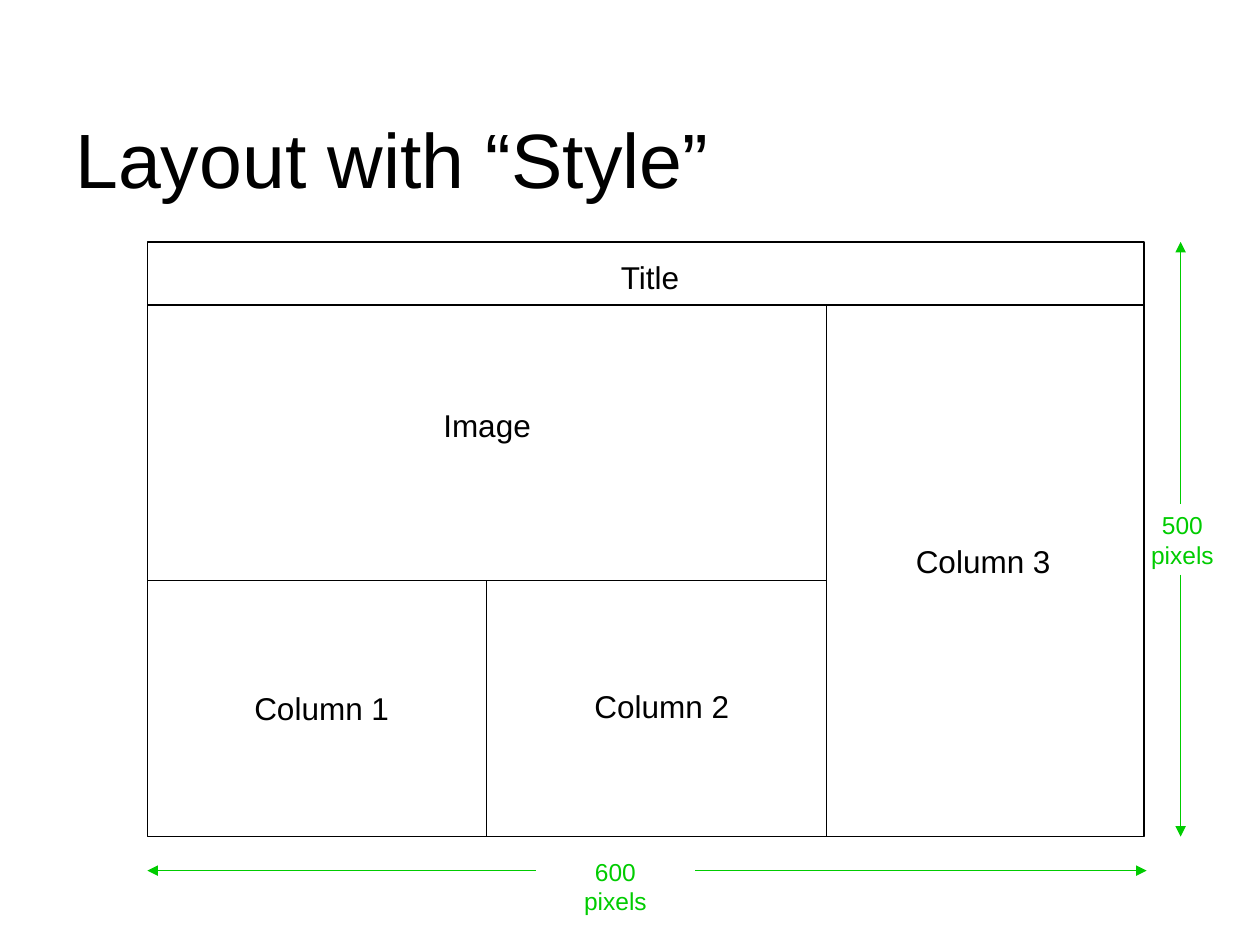
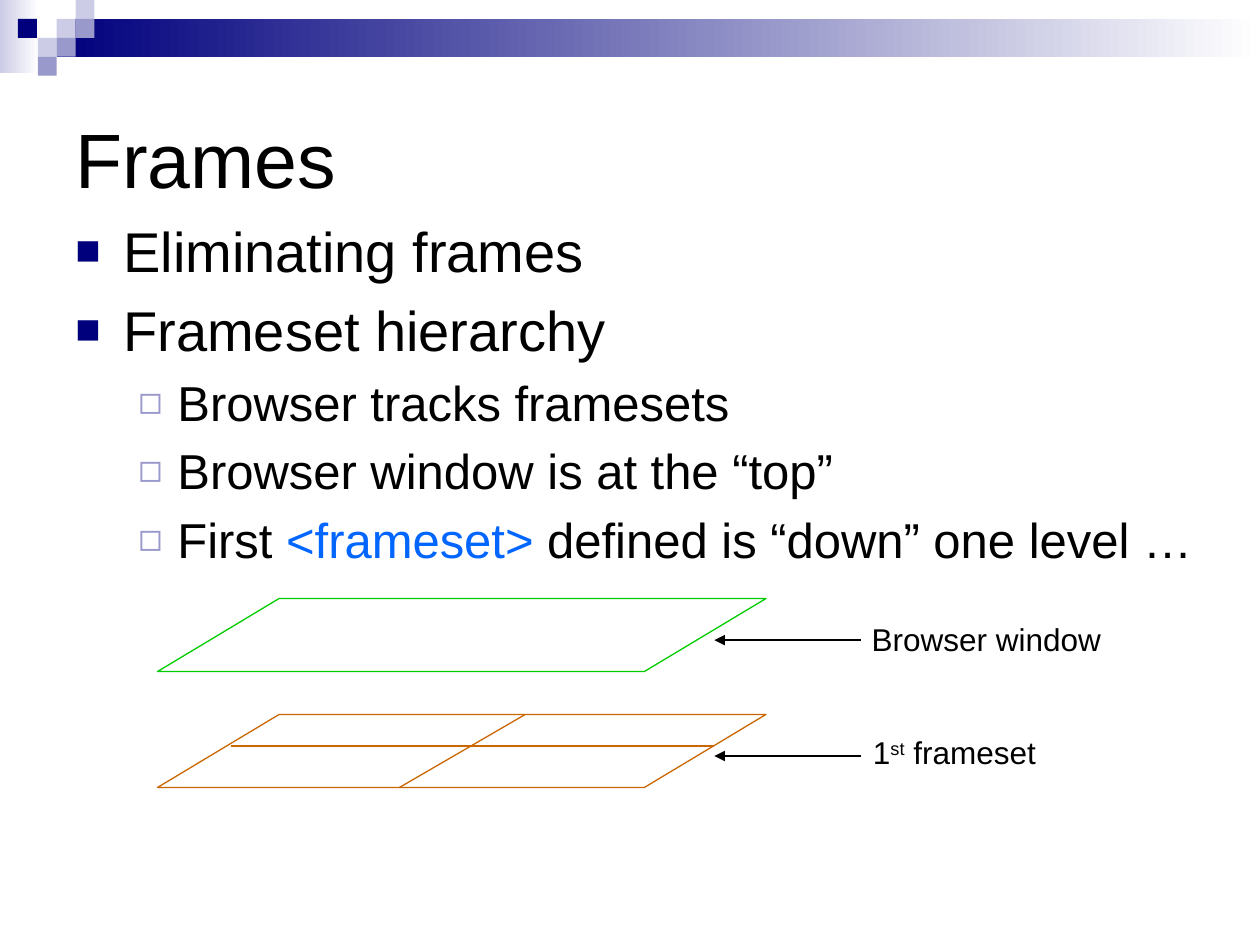
import lxml.etree
import pptx
import pptx.dml.color
import pptx.enum.shapes
import pptx.enum.text
import pptx.oxml.ns
import pptx.util

Inches = pptx.util.Inches
Shape = pptx.enum.shapes.MSO_SHAPE
Align = pptx.enum.text.PP_ALIGN

FONT = "Arial"
BLACK, WHITE = "000000", "FFFFFF"
NAVY, LAVENDER, PALE = "00007D", "9999CC", "CCCCE6"
GREEN, ORANGE, BLUE = "00CC00", "CC6600", "0066FF"
BULLETS = [
    {"size": 32, "margin": 0.38, "indent": -0.38, "char": "■", "color": NAVY, "percent": 75},
    {"size": 28, "margin": 0.81, "indent": -0.31, "char": "◻", "color": LAVENDER, "percent": 80},
]


def rgb(color):
    return pptx.dml.color.RGBColor.from_string(color)


def add_xml(parent, tag, **attributes):
    return lxml.etree.SubElement(parent, pptx.oxml.ns.qn(tag), **attributes)


class Deck:
    """Holds the presentation, its style and the slide being drawn."""

    def __init__(self):
        self.presentation = pptx.Presentation()
        self.presentation.slide_width = Inches(10)
        self.presentation.slide_height = Inches(7.5)
        self.slide = None

    def add_slide(self, title, banded=False):
        self.slide = self.presentation.slides.add_slide(self.presentation.slide_layouts[6])
        if banded:
            self.band()
        frame = self.frame(0.5, 0.5, 9, 1.5)
        frame.vertical_anchor = pptx.enum.text.MSO_ANCHOR.MIDDLE
        self.run(frame.paragraphs[0], title, 44)

    def band(self):
        self.shape(0, 0, 0.31, 0.58, fill=(PALE, WHITE))
        self.shape(0.45, 0.15, 9.55, 0.3, fill=(NAVY, WHITE))
        squares = [(3, 1, PALE), (4, 0, PALE), (4, 1, LAVENDER), (2, 2, PALE),
                   (0.95, 1, NAVY), (3, 2, LAVENDER), (2, 3, LAVENDER)]
        for column, row, color in squares:
            self.shape(column * 0.15, row * 0.15, 0.15, 0.15, fill=color)

    def shape(self, left, top, width, height, kind=Shape.RECTANGLE, fill=None, line=None):
        shape = self.slide.shapes.add_shape(
            kind, Inches(left), Inches(top), Inches(width), Inches(height))
        shape.shadow.inherit = False
        if fill is None:
            shape.fill.background()
        elif isinstance(fill, tuple):
            shape.fill.gradient()
            shape.fill.gradient_angle = 0
            for stop, color in zip(shape.fill.gradient_stops, fill):
                stop.color.rgb = rgb(color)
        else:
            shape.fill.solid()
            shape.fill.fore_color.rgb = rgb(fill)
        if line:
            shape.line.color.rgb = rgb(line)
            shape.line.width = pptx.util.Pt(0.75)
        else:
            shape.line.fill.background()

    def line(self, start, end, color=BLACK, arrow=False):
        connector = self.slide.shapes.add_connector(
            pptx.enum.shapes.MSO_CONNECTOR.STRAIGHT, *map(Inches, start + end))
        connector.line.color.rgb = rgb(color)
        connector.line.width = pptx.util.Pt(0.75)
        properties = connector._element.spPr
        if arrow:
            add_xml(properties.find(pptx.oxml.ns.qn("a:ln")), "a:tailEnd", type="triangle")
        add_xml(properties, "a:effectLst")

    def frame(self, left, top, width, height, wrap=True):
        box = self.slide.shapes.add_textbox(
            Inches(left), Inches(top), Inches(width), Inches(height))
        box.text_frame.word_wrap = wrap
        return box.text_frame

    def run(self, paragraph, text, size, color=BLACK, raised=False):
        run = paragraph.add_run()
        run.text = text
        run.font.name = FONT
        run.font.size = pptx.util.Pt(size)
        run.font.color.rgb = rgb(color)
        if raised:
            run._r.get_or_add_rPr().set("baseline", "30000")

    def label(self, text, left, top, width, height=0.4, size=18, color=BLACK,
              align=Align.LEFT, wrap=False):
        paragraph = self.frame(left, top, width, height, wrap).paragraphs[0]
        paragraph.alignment = align
        pieces = [(text,)] if isinstance(text, str) else text
        for piece, *raised in pieces:
            self.run(paragraph, piece, size, color, *raised)

    def bullets(self, left, top, width, height, items):
        frame = self.frame(left, top, width, height)
        for index, (level, pieces) in enumerate(items):
            paragraph = frame.add_paragraph() if index else frame.paragraphs[0]
            style = BULLETS[level]
            paragraph.level = level
            properties = paragraph._p.get_or_add_pPr()
            properties.set("marL", str(Inches(style["margin"])))
            properties.set("indent", str(Inches(style["indent"])))
            add_xml(add_xml(properties, "a:spcBef"), "a:spcPct", val="20000")
            add_xml(add_xml(properties, "a:buClr"), "a:srgbClr", val=style["color"])
            add_xml(properties, "a:buSzPct", val=str(style["percent"] * 1000))
            add_xml(properties, "a:buFont", typeface=FONT)
            add_xml(properties, "a:buChar", char=style["char"])
            for text, *color in pieces:
                self.run(paragraph, text, style["size"], *color)


def draw_layout(deck):
    deck.add_slide("Layout with “Style”")
    left, right, top, bottom = 1.17, 9.08, 1.92, 6.64
    title_bottom, image_bottom = 2.42, 4.61
    first_edge, second_edge = 3.86, 6.56
    deck.shape(left, top, right - left, bottom - top, fill=WHITE, line=BLACK)
    deck.line((left, title_bottom), (right, title_bottom))
    deck.line((second_edge, title_bottom), (second_edge, bottom))
    deck.line((left, image_bottom), (second_edge, image_bottom))
    deck.line((first_edge, image_bottom), (first_edge, bottom))
    deck.label("Title", 4.83, 2, 0.67)
    deck.label("Image", 3.42, 3.17, 0.9)
    columns = [(1.92, 5.42), (4.62, 5.4), (7.17, 4.25)]
    for number, (column_left, column_top) in enumerate(columns, 1):
        deck.label(f"Column {number}", column_left, column_top, 1.27)

    measure = {"size": 14, "color": GREEN, "align": Align.CENTER}
    deck.label("600 pixels", 4.35, 6.75, 1.07, 0.33, **measure)
    deck.label("500 pixels", 9, 4, 0.77, 0.57, wrap=True, **measure)
    for start, end in [(4.25, left), (5.52, 9.1)]:
        deck.line((start, 6.91), (end, 6.91), GREEN, arrow=True)
    for start, end in [(4, top), (4.56, bottom)]:
        deck.line((9.37, start), (9.37, end), GREEN, arrow=True)


def draw_frames(deck):
    deck.add_slide("Frames", banded=True)
    deck.bullets(0.5, 1.67, 9.25, 5, [
        (0, [("Eliminating frames",)]),
        (0, [("Frameset hierarchy",)]),
        (1, [("Browser tracks framesets",)]),
        (1, [("Browser window is at the “top”",)]),
        (1, [("First ",), ("<frameset>", BLUE), (" defined is “down” one level …",)]),
    ])
    for top, color in [(4.75, GREEN), (5.67, ORANGE)]:
        deck.shape(1.25, top, 4.83, 0.58, Shape.FLOWCHART_DATA, line=color)
        deck.line((6.83, top + 0.33), (5.67, top + 0.33), arrow=True)
    deck.line((4.17, 5.67), (3.17, 6.25), ORANGE)
    deck.line((1.83, 5.92), (5.67, 5.92), ORANGE)
    deck.label("Browser window", 6.82, 4.87, 2.02)
    deck.label([("1",), ("st", True), (" frameset",)], 6.83, 5.77, 1.51)


def main():
    deck = Deck()
    draw_layout(deck)
    draw_frames(deck)
    deck.presentation.save("out.pptx")


if __name__ == "__main__":
    main()
